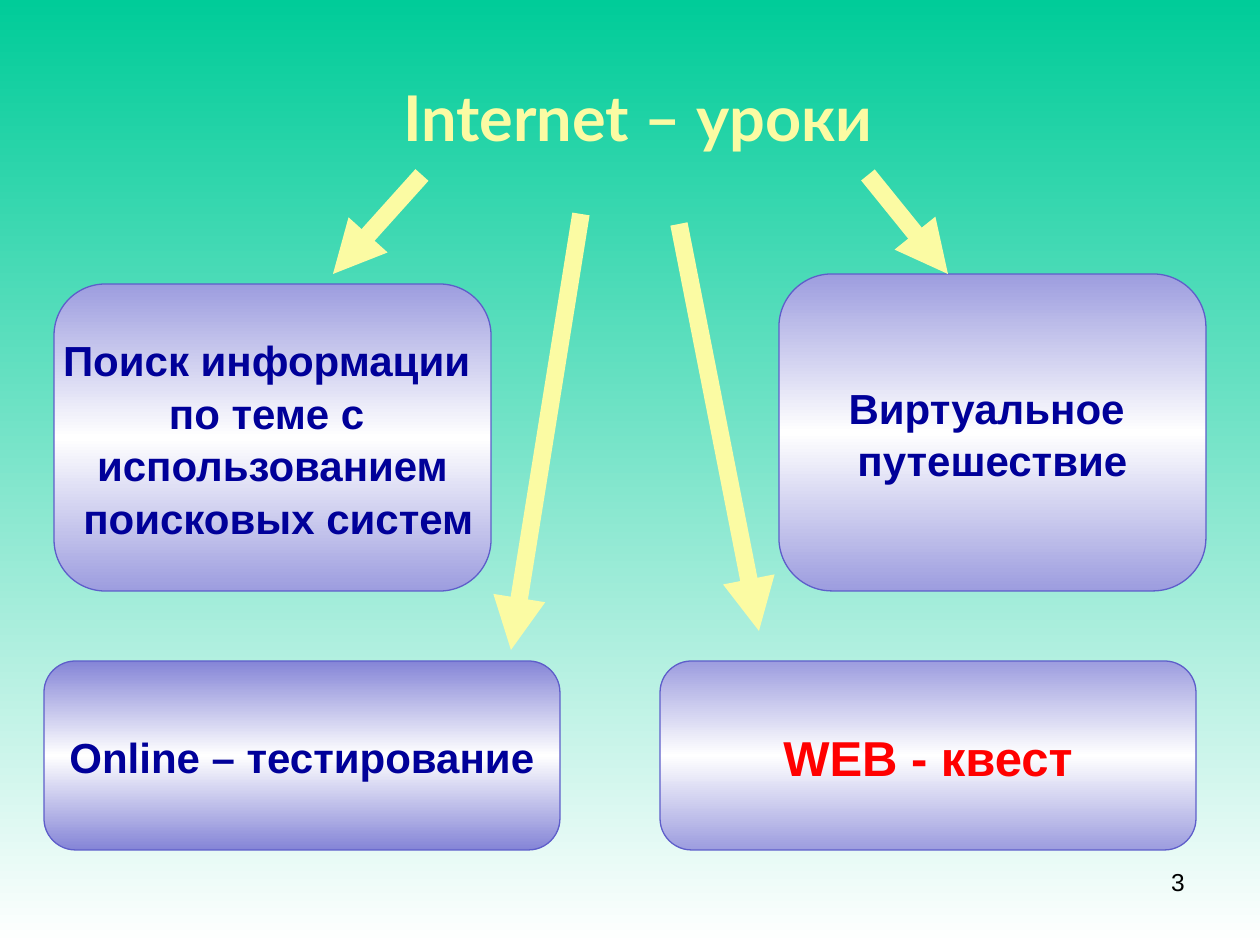
from copy import deepcopy

from pptx import Presentation
from pptx.dml.color import RGBColor
from pptx.enum.shapes import MSO_CONNECTOR, MSO_SHAPE
from pptx.enum.text import MSO_ANCHOR, PP_ALIGN
from pptx.oxml.ns import qn
from pptx.util import Pt
from lxml.etree import SubElement

EMU_PER_PX = 914400 // 126
GREEN = RGBColor(0x00, 0xCC, 0x99)
WHITE = RGBColor(0xFF, 0xFF, 0xFF)
CREAM = RGBColor(0xFB, 0xFB, 0xA3)
LILAC = RGBColor(0x9D, 0x9D, 0xDF)
VIOLET = RGBColor(0x85, 0x85, 0xD7)
OUTLINE = RGBColor(0x5E, 0x5E, 0xCA)
NAVY = RGBColor(0x00, 0x00, 0x99)
RED = RGBColor(0xFF, 0x00, 0x00)
BLACK = RGBColor(0x00, 0x00, 0x00)

CARDS = [
    ((54, 284, 437, 307), LILAC, NAVY, 24,
     ["Поиск информации ", "по теме с ", "использованием", " поисковых систем"]),
    ((779, 274, 427, 317), LILAC, NAVY, 24, ["Виртуальное ", "путешествие"]),
    ((44, 661, 516, 189), VIOLET, NAVY, 24, ["Online – тестирование"]),
    ((660, 661, 536, 189), LILAC, RED, 28, ["WEB - квест"]),
]
ARROWS = [
    (422, 175, 333, 274),
    (868, 175, 948, 274),
    (581, 214, 511, 650),
    (679, 224, 759, 631),
]


def px(*lengths):
    """Turn pixel lengths into EMU."""
    return [length * EMU_PER_PX for length in lengths]


def set_gradient(fill, *colors):
    """Fill from top to bottom with evenly spaced colours."""
    fill.gradient()
    fill.gradient_angle = 270
    first = fill.gradient_stops[0]._gs
    for _ in colors[2:]:
        first.addnext(deepcopy(first))
    for index, (stop, color) in enumerate(zip(fill.gradient_stops, colors)):
        stop.color.rgb = color
        stop.position = index / (len(colors) - 1)


def style_paragraph(paragraph, text, font_name, size, color, bold, alignment):
    """Write one paragraph in a single style."""
    paragraph.text = text
    paragraph.alignment = alignment
    font = paragraph.font
    font.name, font.size, font.bold = font_name, Pt(size), bold
    font.color.rgb = color


def add_title(slide, text):
    """Place and format the title placeholder."""
    title = slide.shapes.title
    title.left, title.top, title.width, title.height = px(63, 38, 1134, 157)
    title.text_frame.vertical_anchor = MSO_ANCHOR.MIDDLE
    style_paragraph(title.text_frame.paragraphs[0], text, "Lato", 36, CREAM,
                    True, PP_ALIGN.CENTER)


def add_card(slide, box, edge_color, text_color, size, lines):
    """Add a rounded card with centred lines of text."""
    card = slide.shapes.add_shape(MSO_SHAPE.FLOWCHART_ALTERNATE_PROCESS, *px(*box))
    card.shadow.inherit = False
    set_gradient(card.fill, edge_color, WHITE, edge_color)
    card.line.color.rgb = OUTLINE
    card.line.width = Pt(0.75)
    frame = card.text_frame
    frame.word_wrap = False
    frame.vertical_anchor = MSO_ANCHOR.MIDDLE
    for index, line in enumerate(lines):
        paragraph = frame.add_paragraph() if index else frame.paragraphs[0]
        style_paragraph(paragraph, line, "Arial", size, text_color, True, PP_ALIGN.CENTER)
        paragraph.line_spacing = 1.05


def add_arrow(slide, *ends):
    """Add a thick line with a triangular head at its end."""
    arrow = slide.shapes.add_connector(MSO_CONNECTOR.STRAIGHT, *px(*ends))
    arrow.line.color.rgb = CREAM
    arrow.line.width = Pt(10)
    SubElement(arrow.line._get_or_add_ln(), qn("a:tailEnd"), type="triangle")
    SubElement(arrow._element.spPr, qn("a:effectLst"))


def add_page_number(slide, number):
    """Add the right-aligned page number."""
    frame = slide.shapes.add_textbox(*px(903, 861, 294, 66)).text_frame
    frame.word_wrap = True
    style_paragraph(frame.paragraphs[0], number, "Arial", 14, BLACK, False, PP_ALIGN.RIGHT)


def main():
    """Build and save the slide."""
    presentation = Presentation()
    presentation.slide_width, presentation.slide_height = px(1260, 945)
    slide = presentation.slides.add_slide(presentation.slide_layouts[5])
    set_gradient(slide.background.fill, GREEN, WHITE)
    add_page_number(slide, "3")
    add_title(slide, " Internet – уроки")
    for card in CARDS:
        add_card(slide, *card)
    for arrow in ARROWS:
        add_arrow(slide, *arrow)
    presentation.save("out.pptx")


if __name__ == "__main__":
    main()
